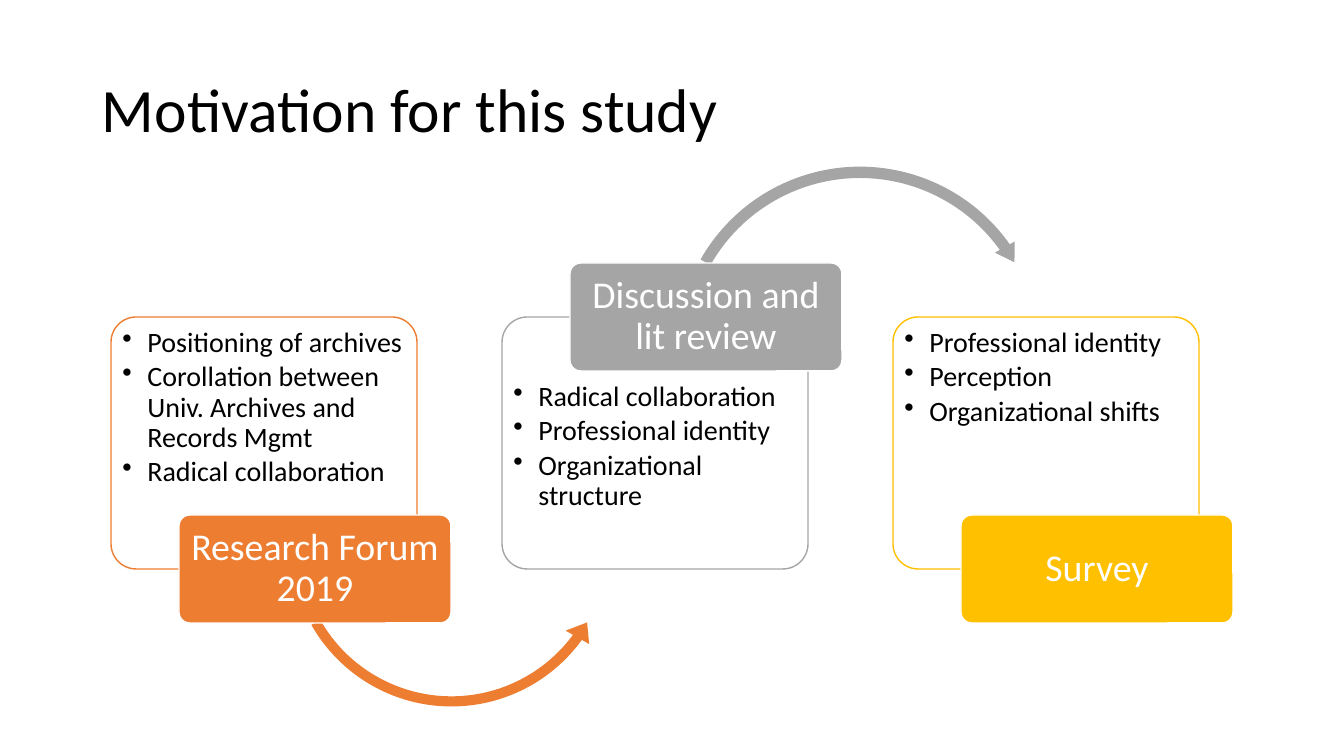
from dataclasses import dataclass

from lxml import etree
from pptx import Presentation
from pptx.dml.color import RGBColor
from pptx.enum.shapes import MSO_SHAPE
from pptx.enum.text import MSO_ANCHOR, MSO_AUTO_SIZE, PP_ALIGN
from pptx.oxml.ns import qn
from pptx.util import Pt

ROUND_RECT = MSO_SHAPE.ROUNDED_RECTANGLE
ARROW_UNDER = MSO_SHAPE.LEFT_CIRCULAR_ARROW
ARROW_OVER = MSO_SHAPE.CIRCULAR_ARROW
LEFT, CENTER = PP_ALIGN.LEFT, PP_ALIGN.CENTER
TOP, MIDDLE = MSO_ANCHOR.TOP, MSO_ANCHOR.MIDDLE
NO_FIT = MSO_AUTO_SIZE.NONE
TITLE_ONLY = 5
PX = 914400 / 100.8


@dataclass(frozen=True)
class Theme:
    font: str = "Calibri"
    black: str = "000000"
    white: str = "FFFFFF"
    orange: str = "ED7D31"
    gray: str = "A5A5A5"
    gold: str = "FFC000"
    title_size: int = 44
    label_size: int = 27
    list_size: int = 20
    line_width: int = 1
    line_spacing: float = 0.9
    bullet_gap: int = 3


THEME = Theme()

FIRST_CARD = (111, 317, 306, 252)
CARD_PITCH = 391
LABEL_SHIFT, LABEL_WIDTH, LABEL_HEIGHT = 68, 272, 108
BULLET_INDENT = 25

STAGES = [
    {
        "label": "Research Forum 2019",
        "items": [
            "Positioning of archives",
            "Corollation between Univ. Archives and Records Mgmt",
            "Radical collaboration",
        ],
        "color": THEME.orange,
        "label_on_top": False,
        "arrow": (ARROW_UNDER, (171, 59, 339), (0.03, 3.92, 21.67, 90.25, 0.04)),
    },
    {
        "label": "Discussion and lit review",
        "items": [
            "Radical collaboration",
            "Professional identity",
            "Organizational structure",
        ],
        "color": THEME.gray,
        "label_on_top": True,
        "arrow": (ARROW_OVER, (169, -156, 378), (0.03, 3.48, 194.76, 125.76, 0.03)),
    },
    {
        "label": "Survey",
        "items": ["Professional identity", "Perception", "Organizational shifts"],
        "color": THEME.gold,
        "label_on_top": False,
        "arrow": None,
    },
]


def px(length):
    return round(length * PX)


def set_attrs(target, values):
    for name, value in values.items():
        setattr(target, name, value)


def format_frame(tf, anchor, margins):
    left, top, right, bottom = (px(m) for m in margins)
    set_attrs(tf, {
        "word_wrap": True, "auto_size": NO_FIT, "vertical_anchor": anchor,
        "margin_left": left, "margin_top": top,
        "margin_right": right, "margin_bottom": bottom,
    })


def write_paragraph(p, text, size, color, align, gap=0):
    set_attrs(p, {
        "alignment": align, "line_spacing": THEME.line_spacing,
        "space_before": Pt(0), "space_after": Pt(gap),
    })
    r = p.add_run()
    r.text = text
    set_attrs(r.font, {"name": THEME.font, "size": Pt(size)})
    r.font.color.rgb = RGBColor.from_string(color)


def add_bullet(p):
    pPr = p._p.get_or_add_pPr()
    pPr.set("marL", str(px(BULLET_INDENT)))
    pPr.set("indent", str(-px(BULLET_INDENT)))
    etree.SubElement(pPr, qn("a:buChar")).set("char", "•")


def add_shape(s, kind, box, adjustments, fill, line=None):
    sp = s.shapes.add_shape(kind, *(px(v) for v in box))
    sp.shadow.inherit = False
    for i, value in enumerate(adjustments):
        sp.adjustments[i] = value
    sp.fill.solid()
    sp.fill.fore_color.rgb = RGBColor.from_string(fill)
    if line:
        sp.line.color.rgb = RGBColor.from_string(line)
        sp.line.width = Pt(THEME.line_width)
    else:
        sp.line.fill.background()
    return sp


def add_title(s, text, box):
    title = s.shapes.title
    set_attrs(title, dict(zip(("left", "top", "width", "height"), (px(v) for v in box))))
    tf = title.text_frame
    format_frame(tf, MIDDLE, (10, 5, 10, 5))
    write_paragraph(tf.paragraphs[0], text, THEME.title_size, THEME.black, LEFT)


def add_card(s, box, stage):
    sp = add_shape(s, ROUND_RECT, box, (0.1,), THEME.white, stage["color"])
    tf = sp.text_frame
    top = 4 + (LABEL_HEIGHT // 2 if stage["label_on_top"] else 0)
    format_frame(tf, TOP, (4, top, 4, 4))
    for i, item in enumerate(stage["items"]):
        p = tf.add_paragraph() if i else tf.paragraphs[0]
        write_paragraph(p, item, THEME.list_size, THEME.black, LEFT, THEME.bullet_gap)
        add_bullet(p)


def add_label(s, box, stage):
    left, top, _, height = box
    edge = top if stage["label_on_top"] else top + height
    label_box = (left + LABEL_SHIFT, edge - LABEL_HEIGHT // 2, LABEL_WIDTH, LABEL_HEIGHT)
    sp = add_shape(s, ROUND_RECT, label_box, (0.1,), stage["color"], THEME.white)
    tf = sp.text_frame
    format_frame(tf, MIDDLE, (6, 4, 6, 4))
    write_paragraph(tf.paragraphs[0], stage["label"], THEME.label_size, THEME.white, CENTER)


def add_stage(s, box, stage):
    add_card(s, box, stage)
    if stage["arrow"]:
        kind, (dx, dy, side), adjustments = stage["arrow"]
        arrow_box = (box[0] + dx, box[1] + dy, side, side)
        add_shape(s, kind, arrow_box, adjustments, stage["color"])
    add_label(s, box, stage)


def main():
    prs = Presentation()
    set_attrs(prs, {"slide_width": px(1344), "slide_height": px(756)})
    s = prs.slides.add_slide(prs.slide_layouts[TITLE_ONLY])
    add_title(s, "Motivation for this study", (92, 40, 1159, 146))
    left, top, width, height = FIRST_CARD
    for i, stage in enumerate(STAGES):
        add_stage(s, (left + i * CARD_PITCH, top, width, height), stage)
    prs.save("out.pptx")


if __name__ == "__main__":
    main()
